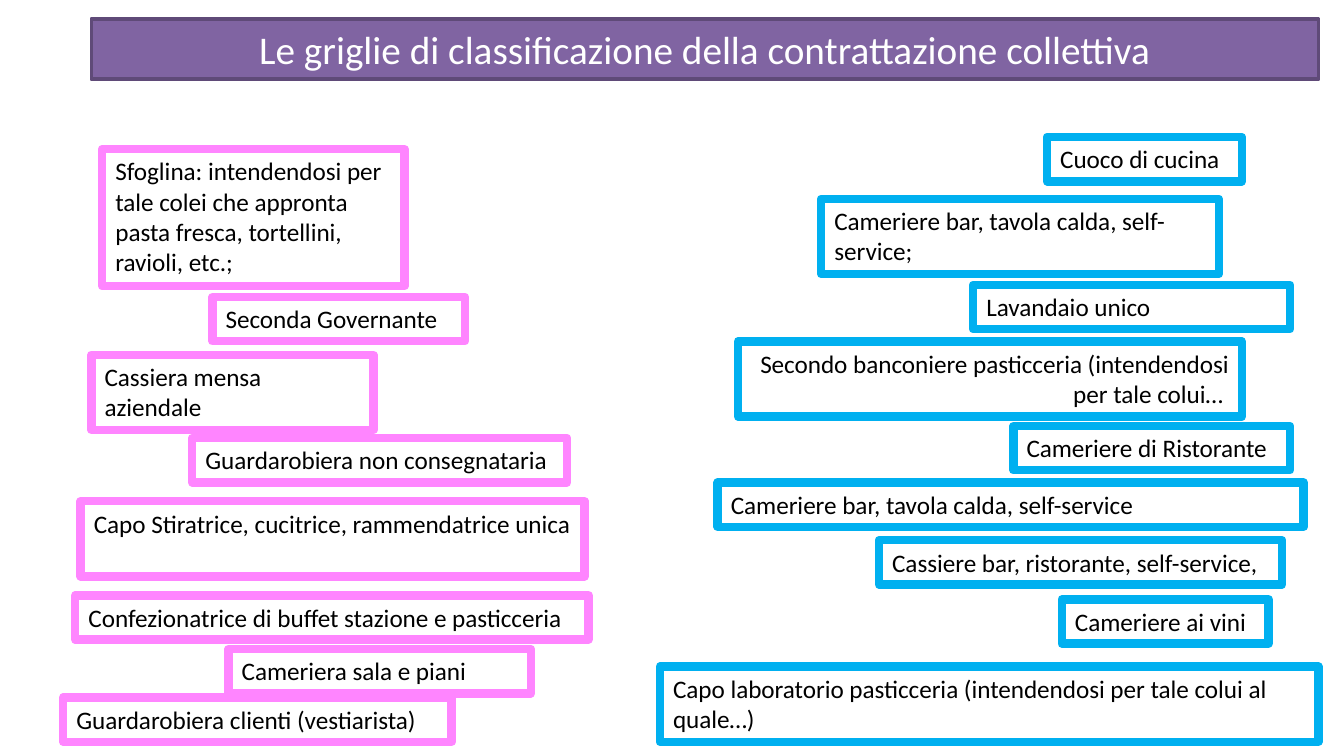
"""Build a slide of job titles from collective agreements, women's on the left and men's on the right."""
import pptx
import pptx.dml.color
import pptx.enum.text
import pptx.util

Inches = pptx.util.Inches
Align = pptx.enum.text.PP_ALIGN

THEME = {
    "font": "Calibri",
    "title_size": 21,
    "body_size": 13.5,
    "title_fill": "8064A2",
    "title_line": "5F4A78",
    "title_text": "FFFFFF",
    "body_text": "000000",
    "women": "FF85FF",
    "men": "00B0F0",
    "title_border": 2,
    "box_border": 4.5,
}
PAGE_WIDTH = 10
PAGE_HEIGHT = PAGE_WIDTH * 9 / 16
LINE_HEIGHT = 0.23
PADDING = 0.05

TITLE = "Le griglie di classificazione della contrattazione collettiva"
TITLE_AREA = (0.68, 0.14, 9.13, 0.45)

JOBS = {
    "women": [
        ("Sfoglina: intendendosi per tale colei che appronta pasta fresca, tortellini, ravioli, etc.;",
         0.76, 1.11, 2.25, 4, Align.LEFT),
        ("Seconda Governante", 1.58, 2.21, 1.88, 1, Align.LEFT),
        ("Cassiera mensa aziendale", 0.68, 2.64, 2.1, 2, Align.LEFT),
        ("Guardarobiera non consegnataria", 1.43, 3.26, 2.79, 1, Align.LEFT),
        ("Capo Stiratrice, cucitrice, rammendatrice unica", 0.6, 3.73, 3.75, 2, Align.LEFT),
        ("Confezionatrice di buffet stazione e pasticceria", 0.56, 4.43, 3.82, 1, Align.LEFT),
        ("Cameriera sala e piani", 1.7, 4.83, 2.25, 1, Align.LEFT),
        ("Guardarobiera clienti (vestiarista)", 0.47, 5.19, 2.89, 1, Align.LEFT),
    ],
    "men": [
        ("Cuoco di cucina", 7.79, 1.02, 1.45, 1, Align.LEFT),
        ("Cameriere bar, tavola calda, self-service;", 6.11, 1.48, 2.96, 2, Align.LEFT),
        ("Lavandaio unico", 7.24, 2.12, 2.36, 1, Align.LEFT),
        ("Secondo banconiere pasticceria (intendendosi per tale colui… ",
         5.49, 2.54, 3.75, 2, Align.RIGHT),
        ("Cameriere di Ristorante", 7.54, 3.17, 2.06, 1, Align.LEFT),
        ("Cameriere bar, tavola calda, self-service", 5.34, 3.59, 4.36, 1, Align.LEFT),
        ("Cassiere bar, ristorante, self-service,", 6.54, 4.02, 3, 1, Align.LEFT),
        ("Cameriere ai vini", 7.9, 4.46, 1.54, 1, Align.LEFT),
        ("Capo laboratorio pasticceria (intendendosi per tale colui al quale…)",
         4.91, 4.96, 4.9, 2, Align.LEFT),
    ],
}


def color(name):
    return pptx.dml.color.RGBColor.from_string(THEME[name])


def write(box, text, size="body_size", ink="body_text", align=Align.LEFT):
    frame = box.text_frame
    frame.word_wrap = True
    frame.auto_size = pptx.enum.text.MSO_AUTO_SIZE.NONE
    frame.vertical_anchor = pptx.enum.text.MSO_ANCHOR.TOP
    frame.margin_left = frame.margin_right = Inches(2 * PADDING)
    frame.margin_top = frame.margin_bottom = Inches(PADDING)
    para = frame.paragraphs[0]
    para.alignment = align
    span = para.add_run()
    span.text = text
    span.font.name = THEME["font"]
    span.font.size = pptx.util.Pt(THEME[size])
    span.font.color.rgb = color(ink)


def outline(box, ink, border):
    box.line.color.rgb = color(ink)
    box.line.width = pptx.util.Pt(THEME[border])


def add_title(page):
    title = page.shapes.title
    title.left, title.top, title.width, title.height = map(Inches, TITLE_AREA)
    title.fill.solid()
    title.fill.fore_color.rgb = color("title_fill")
    outline(title, "title_line", "title_border")
    write(title, TITLE, size="title_size", ink="title_text", align=Align.CENTER)


def add_job(page, group, text, left, top, width, lines, align):
    height = 2 * PADDING + lines * LINE_HEIGHT
    box = page.shapes.add_textbox(*map(Inches, (left, top, width, height)))
    outline(box, group, "box_border")
    write(box, text, align=align)


def main():
    deck = pptx.Presentation()
    deck.slide_width, deck.slide_height = Inches(PAGE_WIDTH), Inches(PAGE_HEIGHT)
    page = deck.slides.add_slide(deck.slide_layouts.get_by_name("Title Only"))
    add_title(page)
    for group, jobs in JOBS.items():
        for job in jobs:
            add_job(page, group, *job)
    deck.save("out.pptx")


if __name__ == "__main__":
    main()
